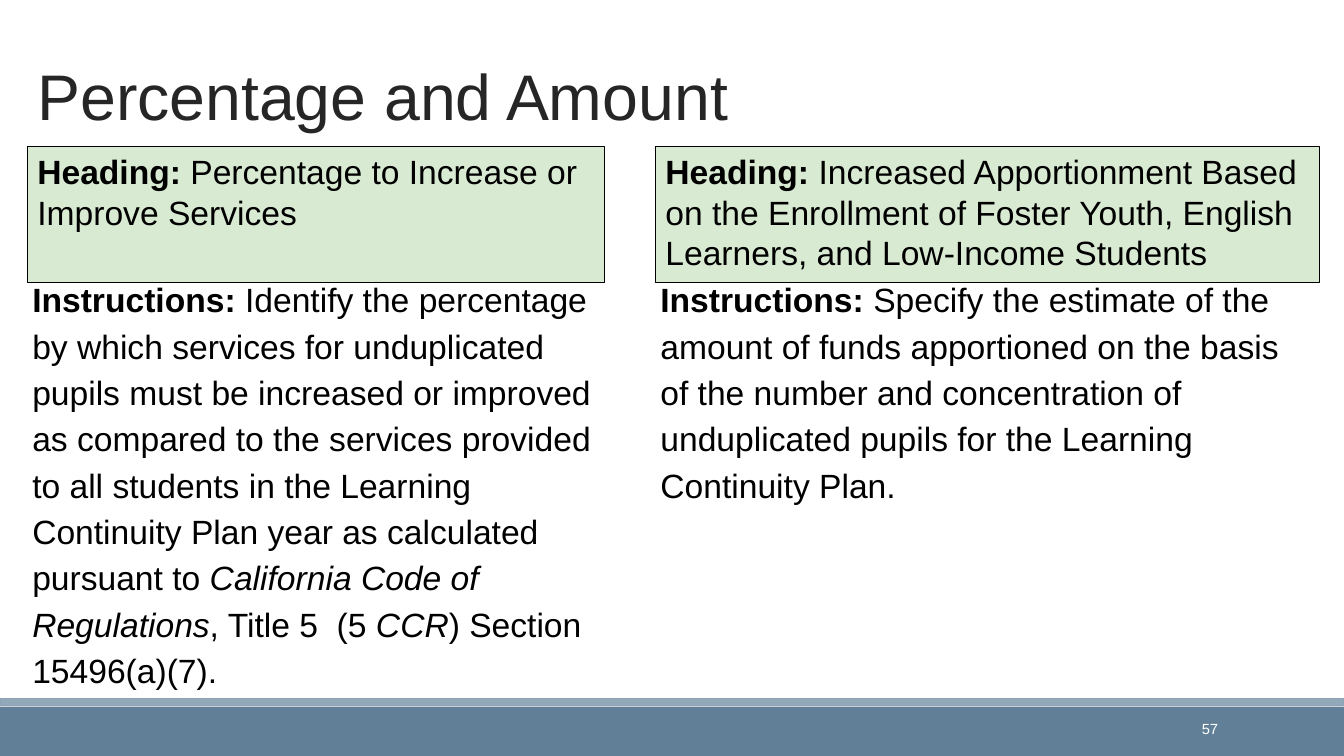
"""Build the Percentage and Amount slide."""
from pptx import Presentation
from pptx.dml.color import RGBColor
from pptx.enum import shapes, text
from pptx.oxml import ns
from pptx.util import Inches, Pt
from lxml import etree

HUES = {"ink": "000000", "title": "262626", "mint": "D9EAD3", "bar": "618097",
        "strip": "92A9B9", "rim": "8FA2B6", "white": "FFFFFF"}


def hue(name):
    return RGBColor.from_string(HUES[name])


def write(box, area, runs, size=24, color="ink", inset=0.1, space=1.0,
          anchor=text.MSO_ANCHOR.TOP, align=text.PP_ALIGN.LEFT):
    box.left, box.top, box.width, box.height = [Inches(n) for n in area]
    frame = box.text_frame
    frame.word_wrap = True
    frame.auto_size = text.MSO_AUTO_SIZE.NONE
    frame.vertical_anchor = anchor
    frame.margin_left = frame.margin_right = Inches(inset)
    frame.margin_top = frame.margin_bottom = Inches(0.05)
    para = frame.paragraphs[0]
    para.alignment = align
    para.line_spacing = space
    para.space_before = Pt(0)
    props = para._p.get_or_add_pPr()
    props.set("marL", "0")
    props.set("indent", "0")
    etree.SubElement(props, ns.qn("a:buNone"))
    for words, style in runs:
        run = para.add_run()
        run.text = words
        font = run.font
        font.name, font.size = "Arial", Pt(size)
        font.color.rgb = hue(color)
        font.bold, font.italic = style == "b", style == "i"


deck = Presentation()
deck.slide_width, deck.slide_height = Inches(13.33), Inches(7.5)
slide = deck.slides.add_slide(deck.slide_layouts[4])
holes = slide.placeholders

for top, high, fill in [(7.01, 0.49, "bar"), (6.93, 0.07, "strip")]:
    band = slide.shapes.add_shape(shapes.MSO_SHAPE.RECTANGLE, 0, Inches(top),
                                  deck.slide_width, Inches(high))
    band.shadow.inherit = False
    band.fill.solid()
    band.fill.fore_color.rgb = hue(fill)
    if fill == "strip":
        band.line.color.rgb = hue("rim")
        band.line.width = Pt(1.25)
    else:
        band.line.fill.background()

write(slide.shapes.title, (0.27, 0.2, 11, 1.18), [("Percentage and Amount", "")],
      size=46, color="title", space=0.85, anchor=text.MSO_ANCHOR.BOTTOM)

columns = [
    (0.27, 5.73, 3.36,
     [("Heading:", "b"), (" Percentage to Increase or Improve Services", "")],
     [("Instructions:", "b"),
      (" Identify the percentage by which services for unduplicated pupils must be "
       "increased or improved as compared to the services provided to all students in "
       "the Learning Continuity Plan year as calculated pursuant to ", ""),
      ("California Code of Regulations", "i"), (", Title 5  (5 ", ""),
      ("CCR", "i"), (") Section 15496(a)(7).", "")]),
    (6.5, 6.59, 3.49,
     [("Heading: ", "b"),
      ("Increased Apportionment Based on the Enrollment of Foster Youth, English "
       "Learners, and Low-Income Students", "")],
     [("Instructions: ", "b"),
      ("Specify the estimate of the amount of funds apportioned on the basis of the "
       "number and concentration of unduplicated pupils for the Learning Continuity "
       "Plan.", "")]),
]
for spot, (left, wide, high, head, body) in enumerate(columns):
    card = holes[2 * spot + 1]
    write(card, (left, 1.45, wide, 1.35), head)
    card.fill.solid()
    card.fill.fore_color.rgb = hue("mint")
    card.line.color.rgb = hue("ink")
    card.line.width = Pt(0.75)
    write(holes[2 * spot + 2], (left, 2.66, wide, high), body, inset=0.05, space=1.15)

page = slide.shapes.add_textbox(0, 0, Inches(1), Inches(1))
write(page, (10.75, 7.03, 1.43, 0.4), [("57", "")], size=10.5, color="white",
      anchor=text.MSO_ANCHOR.MIDDLE, align=text.PP_ALIGN.RIGHT)

deck.save("out.pptx")
